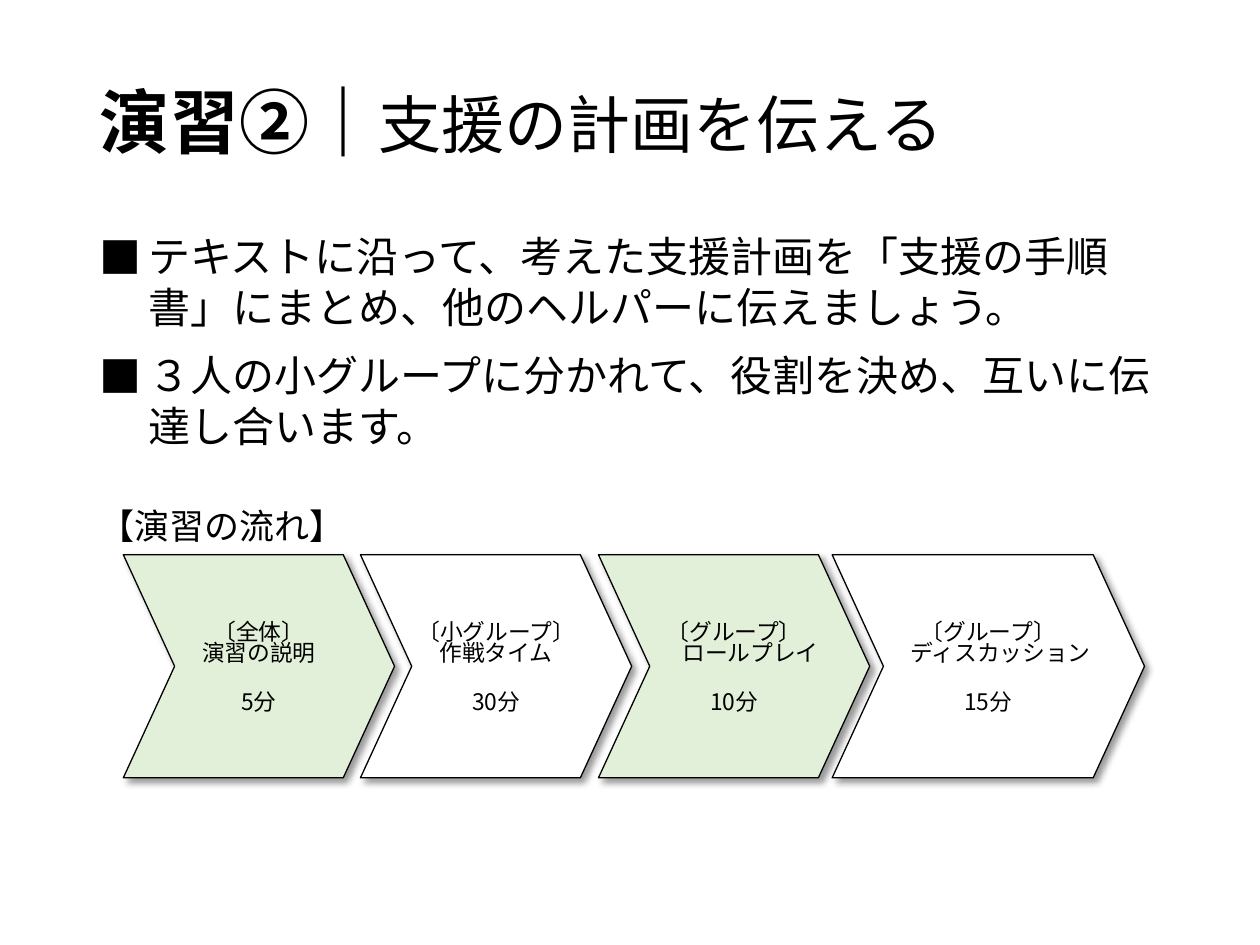
from lxml import etree
from pptx import Presentation
from pptx.dml.color import RGBColor
from pptx.enum import shapes, text
from pptx.oxml import ns
from pptx.util import Pt

FONT = "Noto Sans CJK JP"
BLACK, WHITE, GREEN = "000000", "FFFFFF", "E2F0D9"
MID, RIGHT = text.PP_ALIGN.CENTER, text.PP_ALIGN.RIGHT

# Content
TITLE = [("演習②｜", 40, True), ("支援の計画を伝える", 36, False)]
POINTS = [
    "テキストに沿って、考えた支援計画を「支援の手順書」にまとめ、他のヘルパーに伝えましょう。",
    "３人の小グループに分かれて、役割を決め、互いに伝達し合います。",
]
HEAD = "【演習の流れ】"
# left, width, fill, side inset, who, task, task alignment, time
STEPS = [
    (70.5, 155, GREEN, 1.5, "〔全体〕", "演習の説明", MID, "5分"),
    (206, 155, WHITE, 0, "〔小グループ〕", "作戦タイム", MID, "30分"),
    (342, 155, GREEN, 0, "〔グループ〕", "ロールプレイ", RIGHT, "10分"),
    (475.5, 178.5, WHITE, 1.5, "〔グループ〕", "ディスカッション", RIGHT, "15分"),
]
STEP_TOP, STEP_H = 317, 127.5


def color(code):
    return RGBColor.from_string(code)


def add(parent, tag, **attrs):
    return etree.SubElement(parent, ns.qn(tag), attrs)


def style(run, size, bold=False):
    font = run.font
    font.name, font.size, font.bold = FONT, Pt(size), bold
    font.color.rgb = color(BLACK)
    add(run.font._element, "a:ea", typeface=FONT)


def space(para, line, before=0):
    para.line_spacing, para.space_before = Pt(line), Pt(before)


def place(shape, left, top, width, height):
    shape.left, shape.top = Pt(left), Pt(top)
    shape.width, shape.height = Pt(width), Pt(height)
    shape.text_frame.auto_size = text.MSO_AUTO_SIZE.NONE


def bullet(para, mark=None):
    props = para._p.get_or_add_pPr()
    indent = Pt(28) if mark else 0
    props.set("marL", str(indent))
    props.set("indent", str(-indent))
    if mark:
        add(props, "a:buFont", typeface=FONT)
        add(props, "a:buChar", char=mark)
    else:
        add(props, "a:buNone")


def shade(shape):
    effects = add(shape._element.spPr, "a:effectLst")
    outer = add(effects, "a:outerShdw", blurRad=str(Pt(4)), dist=str(Pt(3)),
                dir="2700000", algn="tl", rotWithShape="0")
    tint = add(outer, "a:srgbClr", val=BLACK)
    add(tint, "a:alpha", val="40000")


def add_step(slide, left, width, fill, inset, who, task, align, time):
    step = slide.shapes.add_shape(shapes.MSO_SHAPE.CHEVRON, Pt(left),
                                  Pt(STEP_TOP), Pt(width), Pt(STEP_H))
    step.adjustments[0] = 0.23
    step.fill.solid()
    step.fill.fore_color.rgb = color(fill)
    step.line.color.rgb = color(BLACK)
    step.line.width = Pt(0.75)
    shade(step)
    frame = step.text_frame
    frame.word_wrap = True
    frame.vertical_anchor = text.MSO_ANCHOR.MIDDLE
    frame.margin_left = frame.margin_right = Pt(inset)
    frame.text = "\n".join((who, task, time))
    rules = [(MID, 16, 0), (align, 12, 0), (MID, 16, 12)]
    for para, (side, line, before) in zip(frame.paragraphs, rules):
        para.alignment = side
        space(para, line, before)
        style(para.runs[0], 13)


def main():
    deck = Presentation()
    deck.slide_width, deck.slide_height = Pt(720), Pt(540)
    slide = deck.slides.add_slide(deck.slide_layouts[1])

    # Title
    title = slide.shapes.title
    place(title, 49.5, 29, 621, 86)
    title.text_frame.vertical_anchor = text.MSO_ANCHOR.MIDDLE
    para = title.text_frame.paragraphs[0]
    para.alignment = text.PP_ALIGN.LEFT
    para.line_spacing = 0.9
    for words, size, bold in TITLE:
        run = para.add_run()
        run.text = words
        style(run, size, bold)

    # Points and heading of the flow
    body = slide.placeholders[1]
    place(body, 49.5, 126, 621, 382)
    frame = body.text_frame
    frame.margin_top = Pt(5.5)
    frame.text = "\n".join(POINTS + [HEAD])
    *points, head = frame.paragraphs
    for para in points:
        space(para, 29, 10)
        bullet(para, "■")
        style(para.runs[0], 24)
    space(head, 24, 31)
    bullet(head)
    style(head.runs[0], 20)

    # Flow of steps
    for step in STEPS:
        add_step(slide, *step)

    deck.save("out.pptx")


if __name__ == "__main__":
    main()
